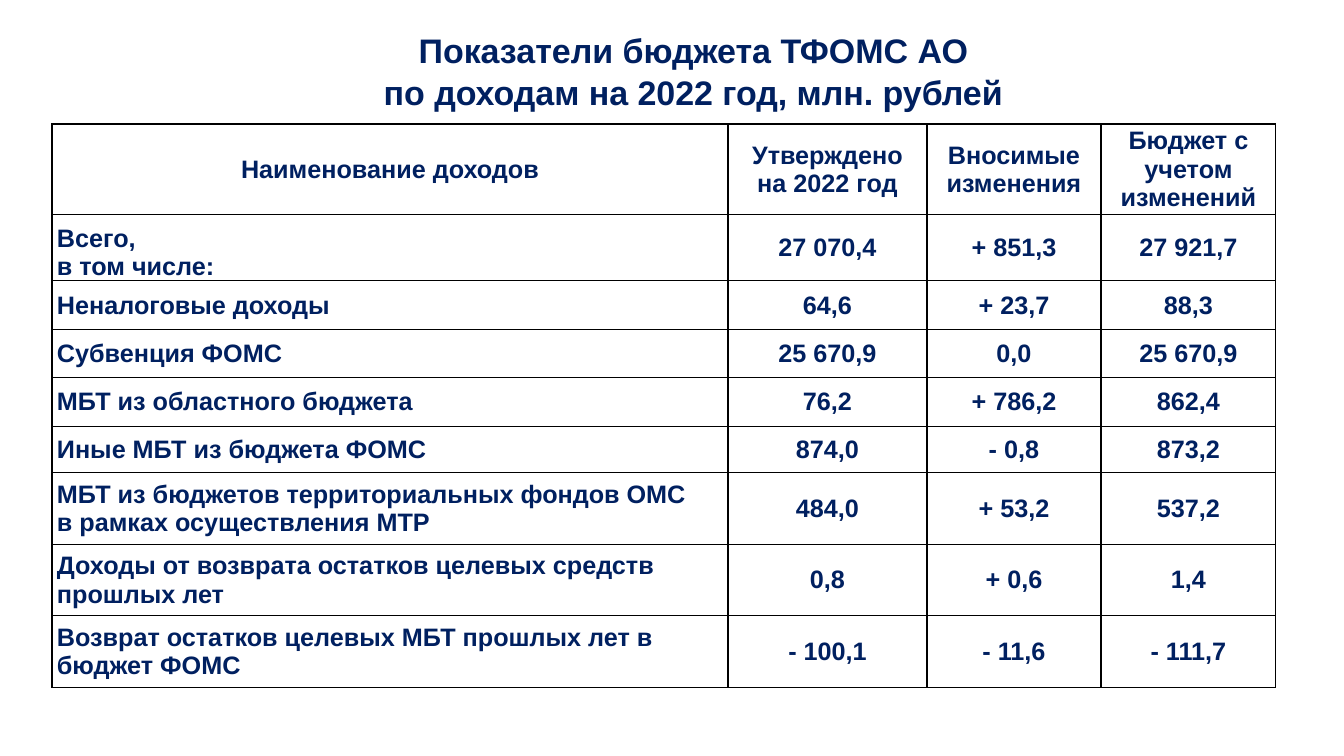
from dataclasses import dataclass

from lxml.etree import SubElement
from pptx import Presentation
from pptx.dml.color import RGBColor
from pptx.enum.text import MSO_ANCHOR, PP_ALIGN
from pptx.oxml.ns import qn
from pptx.slide import Slide
from pptx.table import Table, _Cell
from pptx.text.text import TextFrame
from pptx.util import Pt

SCALE = 914400 / 100.8


@dataclass(frozen=True)
class Theme:
    """Colours, font and type sizes of the slide."""
    ink: str = "002060"
    line: str = "000000"
    paper: str = "FFFFFF"
    font: str = "Arial"
    title: float = 24.3
    body: float = 18


@dataclass(frozen=True)
class Row:
    """One table row: its cell texts, height in px and label layout."""
    cells: tuple[str, str, str, str]
    height: int
    align: PP_ALIGN = PP_ALIGN.LEFT
    anchor: MSO_ANCHOR = MSO_ANCHOR.MIDDLE


THEME = Theme()
TITLE = "Показатели бюджета ТФОМС АО\vпо доходам на 2022 год, млн. рублей"
COLS = (676, 199, 174, 175)
ROWS = (
    Row(("Наименование доходов", "Утверждено\nна 2022 год", "Вносимые изменения",
         "Бюджет с учетом изменений"), 88, align=PP_ALIGN.CENTER),
    Row(("Всего,\nв том числе:", "27 070,4", "+ 851,3", "27 921,7"), 66,
        anchor=MSO_ANCHOR.BOTTOM),
    Row(("Неналоговые доходы", "64,6", "+ 23,7", "88,3"), 49),
    Row(("Субвенция ФОМС", "25 670,9", "0,0", "25 670,9"), 48),
    Row(("МБТ из областного бюджета", "76,2", "+ 786,2", "862,4"), 49),
    Row(("Иные МБТ из бюджета ФОМС", "874,0", "- 0,8", "873,2"), 46),
    Row(("МБТ из бюджетов территориальных фондов ОМС\vв рамках осуществления МТР",
         "484,0", "+ 53,2", "537,2"), 72),
    Row(("Доходы от возврата остатков целевых средств прошлых лет",
         "0,8", "+ 0,6", "1,4"), 71),
    Row(("Возврат остатков целевых МБТ прошлых лет в бюджет ФОМС",
         "- 100,1", "- 11,6", "- 111,7"), 72),
)


def px(size: int) -> int:
    """Turn px into EMU."""
    return round(size * SCALE)


def write(frame: TextFrame, text: str, *, size: float = THEME.body,
          align: PP_ALIGN = PP_ALIGN.CENTER, lead: float = 1.0) -> None:
    """Fill a text frame with bold text, one paragraph a line."""
    frame.word_wrap = True
    frame.text = text
    for para in frame.paragraphs:
        para.alignment = align
        para.line_spacing = lead
        for run in para.runs:
            font = run.font
            font.name, font.size, font.bold = THEME.font, Pt(size), True
            font.color.rgb = RGBColor.from_string(THEME.ink)


def frame_cell(cell: _Cell) -> None:
    """Give a cell its borders, fill and margins."""
    props = cell._tc.get_or_add_tcPr()
    for side in ("lnL", "lnR", "lnT", "lnB"):
        line = SubElement(props, qn(f"a:{side}"), w=str(Pt(1)))
        fill = SubElement(line, qn("a:solidFill"))
        SubElement(fill, qn("a:srgbClr"), val=THEME.line)
    cell.fill.solid()
    cell.fill.fore_color.rgb = RGBColor.from_string(THEME.paper)
    cell.margin_left = cell.margin_right = px(5)
    cell.margin_top = cell.margin_bottom = 0


def fill_row(table: Table, index: int, row: Row) -> None:
    """Write one row into the table."""
    table.rows[index].height = px(row.height)
    for col, text in enumerate(row.cells):
        cell = table.cell(index, col)
        frame_cell(cell)
        cell.vertical_anchor = MSO_ANCHOR.MIDDLE if col else row.anchor
        write(cell.text_frame, text, align=PP_ALIGN.CENTER if col else row.align)


def add_title(slide: Slide) -> None:
    """Place the slide title."""
    frame = slide.shapes.add_textbox(px(101), px(21), px(1185), px(88)).text_frame
    frame.margin_left = frame.margin_right = frame.margin_bottom = 0
    frame.margin_top = px(6)
    write(frame, TITLE, size=THEME.title, lead=1.05)


def add_grid(slide: Slide) -> None:
    """Place the income table."""
    high = sum(row.height for row in ROWS)
    table = slide.shapes.add_table(len(ROWS), len(COLS), px(52), px(124),
                                   px(sum(COLS)), px(high)).table
    table.first_row = table.horz_banding = False
    for col, width in zip(table.columns, COLS):
        col.width = px(width)
    for index, row in enumerate(ROWS):
        fill_row(table, index, row)


def main() -> None:
    """Build and save the slide."""
    deck = Presentation()
    deck.slide_width, deck.slide_height = px(1344), px(756)
    slide = deck.slides.add_slide(deck.slide_layouts[6])
    add_title(slide)
    add_grid(slide)
    deck.save("out.pptx")


if __name__ == "__main__":
    main()
